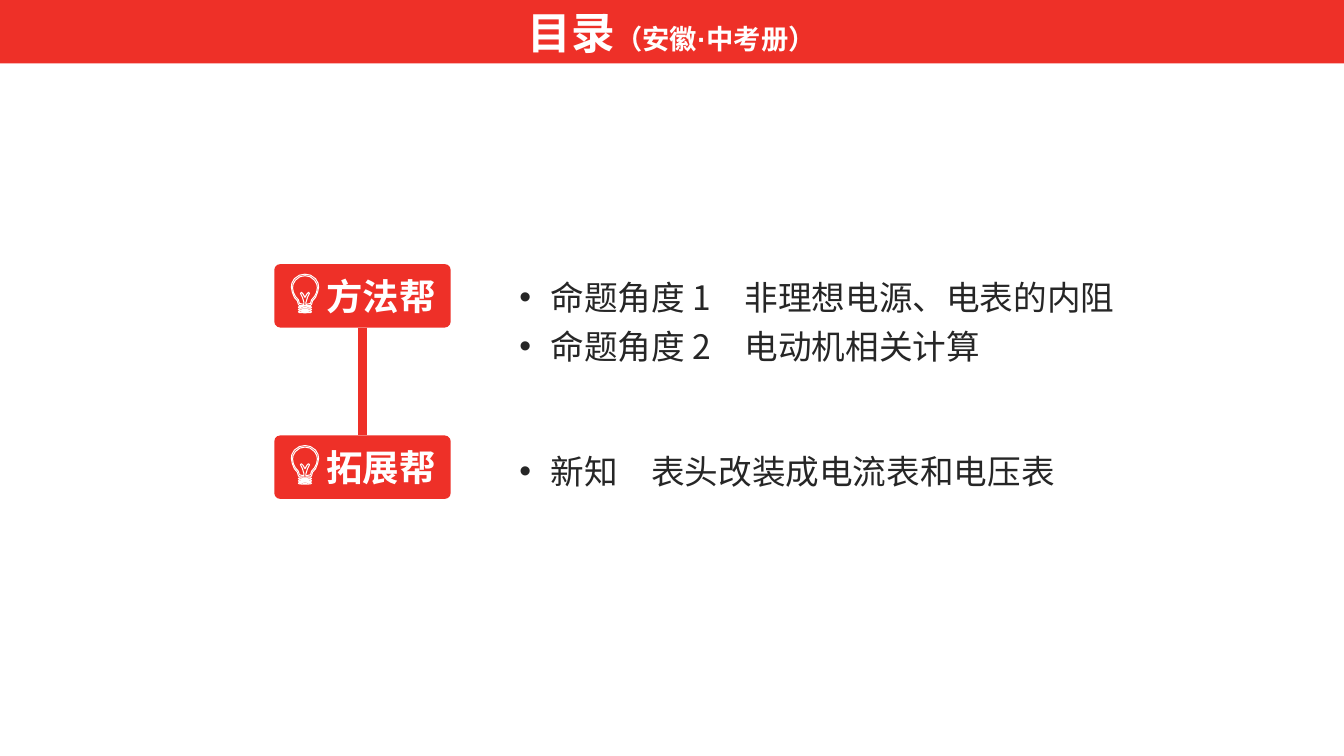
from lxml import etree
from pptx import Presentation
from pptx import util as u
from pptx.dml.color import RGBColor
from pptx.enum import shapes, text
from pptx.oxml.ns import qn

COLORS = {"red": "EE3028", "white": "FFFFFF", "ink": "262626"}
WIDTH, HEIGHT = 13.33, 7.5
ROW = 0.63                                  # height of the banner and of a tag
TAG_LEFT, TAG_WIDTH = 2.72, 1.75
LIST_LEFT, LIST_WIDTH = 5.05, 7.28
FIRST_TOP, PITCH = 2.62, 1.7                # rows of the contents

SECTIONS = [
    ("方法帮", 0, 1.03, ["命题角度 1　非理想电源、电表的内阻", "命题角度 2　电动机相关计算"]),
    ("拓展帮", 0.02, 0.54, ["新知　表头改装成电流表和电压表"]),
]

# Right halves of the bulb's outlines, in thousandths of an inch
BULB_WIDTH = 270
GLASS = [(135, 0), (190, 10), (240, 45), (265, 90), (270, 130), (260, 180), (240, 230),
         (210, 265), (200, 300), (190, 310), (135, 313)]
INSIDE = [(135, 15), (185, 25), (230, 60), (253, 100), (258, 135), (250, 180), (230, 220),
          (200, 255), (190, 290), (145, 300), (145, 280), (160, 230), (180, 190),
          (170, 180), (155, 195), (135, 230)]
RINGS = [[(135, y + 5), (190, y), (200, y + 8), (190, y + 15), (135, y + 17)]
         for y in (320, 343, 366)]


def color(name):
    return RGBColor.from_string(COLORS[name])


def mirrored(half):
    return half + [(BULB_WIDTH - x, y) for x, y in reversed(half)]


prs = Presentation()
prs.slide_width, prs.slide_height = u.Inches(WIDTH), u.Inches(HEIGHT)
slide = prs.slides.add_slide(prs.slide_layouts[3])
title, *lists = slide.placeholders

# Title banner
title.left, title.top = 0, 0
title.width, title.height = prs.slide_width, u.Inches(ROW)
title.fill.solid()
title.fill.fore_color.rgb = color("red")
title.text_frame.auto_size = text.MSO_AUTO_SIZE.NONE
title.text_frame.vertical_anchor = text.MSO_ANCHOR.MIDDLE
heading = title.text_frame.paragraphs[0]
heading.alignment = text.PP_ALIGN.CENTER
heading.font.name, heading.font.bold = "Arial", True
heading.font.color.rgb = color("white")
for words, size in (("目录", 31.2), ("（安徽·中考册）", 19.5)):
    run = heading.add_run()
    run.text = words
    run.font.size = u.Pt(size)

# Sections: tag, bulb and list of topics
tags = []
for i, (name, drop, list_height, topics) in enumerate(SECTIONS):
    top = FIRST_TOP + i * PITCH
    tag = slide.shapes.add_shape(
        shapes.MSO_SHAPE.ROUNDED_RECTANGLE, u.Inches(TAG_LEFT), u.Inches(top),
        u.Inches(TAG_WIDTH), u.Inches(ROW))
    tag.adjustments[0] = 0.095
    tag.shadow.inherit = False
    tag.fill.solid()
    tag.fill.fore_color.rgb = color("red")
    tag.line.fill.background()
    tag.text_frame.margin_right = u.Inches(0.13)
    tag.text_frame.vertical_anchor = text.MSO_ANCHOR.MIDDLE
    label = tag.text_frame.paragraphs[0]
    label.text = name
    label.alignment = text.PP_ALIGN.RIGHT
    label.font.name, label.font.size, label.font.bold = "Arial", u.Pt(26), True
    label.font.color.rgb = color("white")
    tags.append(tag)

    outline = slide.shapes.build_freeform(*GLASS[0], scale=914.4)
    for half in (GLASS, INSIDE, *RINGS):
        outline.move_to(*half[0])
        outline.add_line_segments(mirrored(half)[1:], close=True)
    bulb = outline.convert_to_shape(u.Inches(TAG_LEFT + 0.17), u.Inches(top + 0.1))
    bulb.shadow.inherit = False
    bulb.fill.solid()
    bulb.fill.fore_color.rgb = color("red")
    bulb.line.color.rgb = color("white")
    bulb.line.width = u.Pt(0.75)

    listing = lists[i]
    listing.left, listing.top = u.Inches(LIST_LEFT), u.Inches(top + drop)
    listing.width, listing.height = u.Inches(LIST_WIDTH), u.Inches(list_height)
    frame = listing.text_frame
    frame.text = "\n".join(topics)
    frame.auto_size = text.MSO_AUTO_SIZE.NONE
    for topic in frame.paragraphs:
        topic.line_spacing, topic.space_before = 1.2, u.Pt(0)
        topic.font.name, topic.font.size = "Noto Sans CJK SC", u.Pt(24)
        topic.font.color.rgb = color("ink")
        indents = topic._p.get_or_add_pPr()
        indents.set("marL", str(u.Inches(0.31)))
        indents.set("indent", str(u.Inches(-0.31)))

# Link between the two tags
link = slide.shapes.add_connector(shapes.MSO_CONNECTOR.STRAIGHT, 0, 0, 0, 0)
link.begin_connect(tags[0], 2)
link.end_connect(tags[1], 0)
link.line.color.rgb = color("red")
link.line.width = u.Pt(6)
etree.SubElement(link._element.spPr, qn("a:effectLst"))

prs.save("out.pptx")
